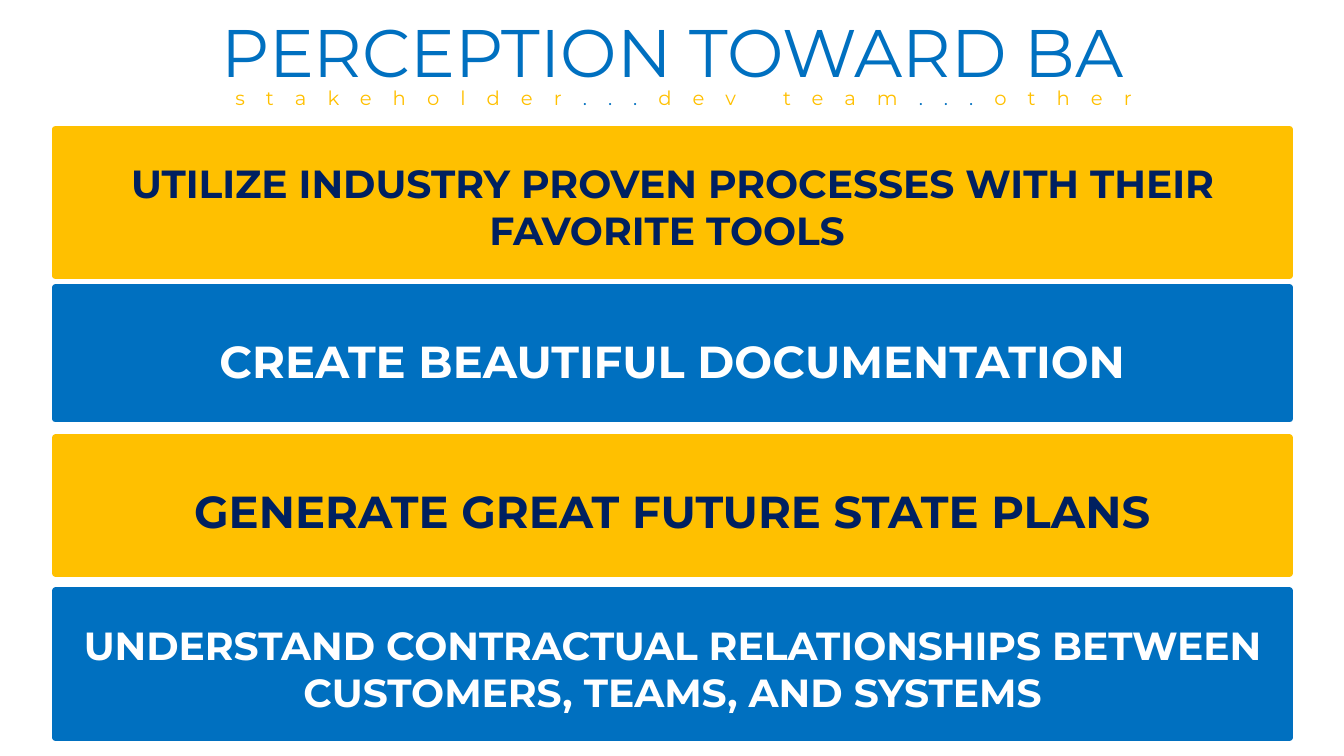
from pptx import Presentation
from pptx.dml.color import RGBColor
from pptx.enum.shapes import MSO_SHAPE
from pptx.enum.text import MSO_ANCHOR, PP_ALIGN
from pptx.util import Inches, Pt

BLUE, GOLD, NAVY, WHITE = "0070C0", "FFC000", "002060", "FFFFFF"
BANDS = [
    (1.28, 1.46, 28, GOLD, NAVY, "UTILIZE INDUSTRY PROVEN PROCESSES WITH THEIR FAVORITE TOOLS "),
    (2.85, 1.31, 32, BLUE, WHITE, "CREATE BEAUTIFUL DOCUMENTATION"),
    (4.34, 1.35, 32, GOLD, NAVY, "GENERATE GREAT FUTURE STATE PLANS"),
    (5.86, 1.46, 28, BLUE, WHITE,
     "UNDERSTAND CONTRACTUAL RELATIONSHIPS BETWEEN CUSTOMERS, TEAMS, AND SYSTEMS"),
]
TOP_INSETS = {28: 0.3, 32: 0.46}
SUBTITLE = [("stakeholder", GOLD), ("...", BLUE), ("dev team", GOLD),
            ("...", BLUE), ("other", GOLD)]


def colour(value):
    return RGBColor.from_string(value)


def style(para, size, text_colour, bold=False):
    para.alignment = PP_ALIGN.CENTER
    para.font.name = "Montserrat"
    para.font.size = Pt(size)
    para.font.bold = bold
    para.font.color.rgb = colour(text_colour)


def add_title(page, left, top, width, height):
    title = page.shapes.title
    title.left, title.top = Inches(left), Inches(top)
    title.width, title.height = Inches(width), Inches(height)
    frame = title.text_frame
    frame.margin_left = frame.margin_right = frame.margin_top = frame.margin_bottom = 0
    frame.vertical_anchor = MSO_ANCHOR.MIDDLE
    frame.text = "PERCEPTION TOWARD BA"
    para = frame.paragraphs[0]
    para.line_spacing = 0.9
    style(para, 48, BLUE)


def add_subtitle(page, left, top, width, height):
    box = page.shapes.add_textbox(Inches(left), Inches(top), Inches(width), Inches(height))
    box.text_frame.word_wrap = True
    para = box.text_frame.paragraphs[0]
    style(para, 14, GOLD)
    for text, text_colour in SUBTITLE:
        span = para.add_run()
        span.text = text
        span.font.color.rgb = colour(text_colour)
        span.font._element.set("spc", "1500")


def add_band(page, left, top, width, height, size, fill, text_colour, text):
    band = page.shapes.add_shape(MSO_SHAPE.RECTANGLE, Inches(left), Inches(top),
                                 Inches(width), Inches(height))
    band.shadow.inherit = False
    band.fill.solid()
    band.fill.fore_color.rgb = colour(fill)
    band.line.color.rgb = colour(fill)
    band.line.width = Pt(4.5)
    frame = band.text_frame
    frame.word_wrap = True
    frame.vertical_anchor = MSO_ANCHOR.TOP
    frame.margin_top = Inches(TOP_INSETS[size])
    frame.text = text
    style(frame.paragraphs[0], size, text_colour, bold=True)


def main():
    deck = Presentation()
    deck.slide_width, deck.slide_height = Inches(13.33), Inches(7.5)
    page = deck.slides.add_slide(deck.slide_layouts[5])
    add_title(page, 0.47, 0.18, 12.4, 0.75)
    add_subtitle(page, 1.78, 0.8, 10, 0.34)
    for top, height, *content in BANDS:
        add_band(page, 0.55, top, 12.24, height, *content)
    deck.save("out.pptx")


if __name__ == "__main__":
    main()
